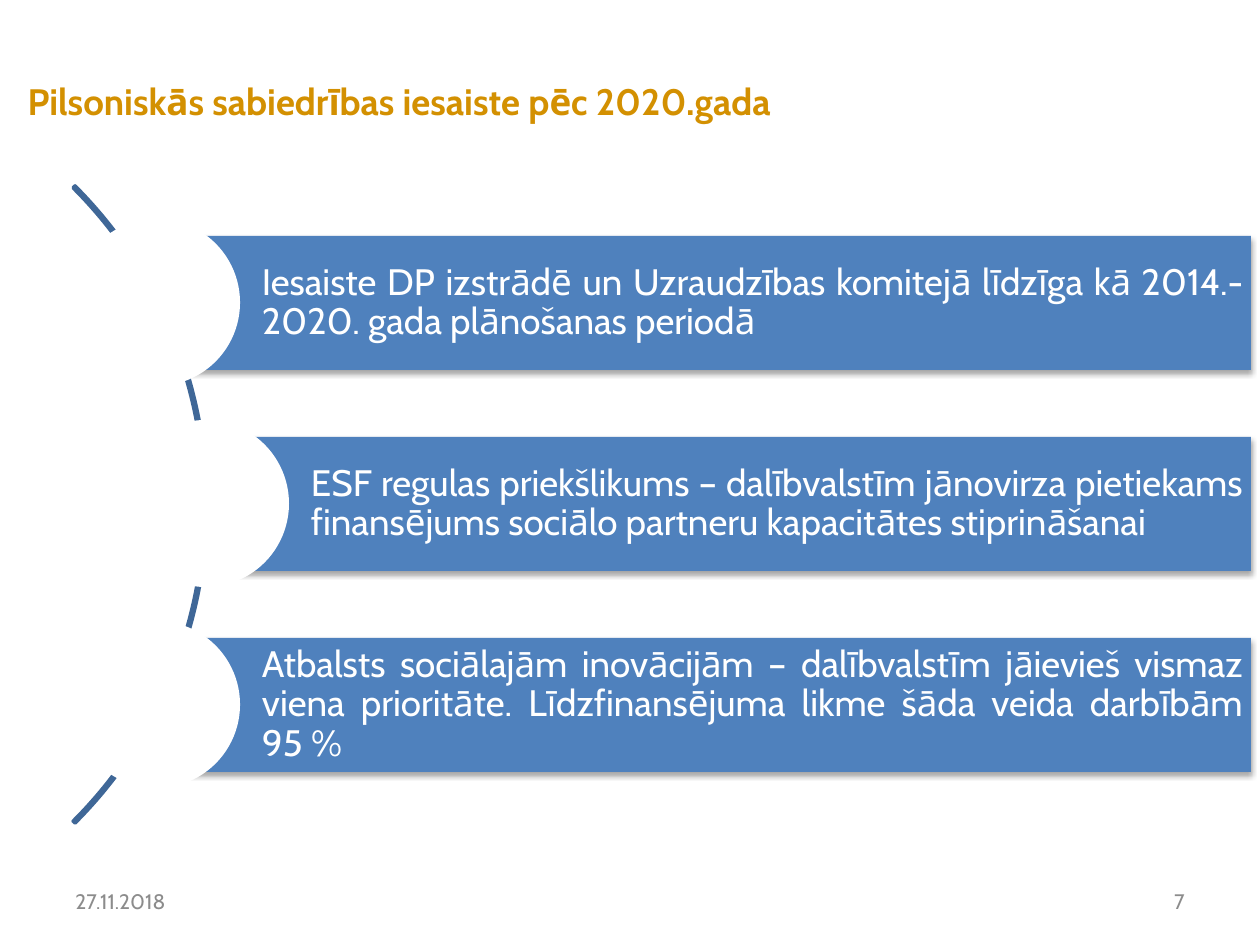
from dataclasses import dataclass

from lxml import etree
from pptx import Presentation
from pptx import util as u
from pptx.dml.color import RGBColor
from pptx.enum import shapes, text
from pptx.oxml import ns

PX_PER_INCH = 126
FONT = "Cabin"
BLUE = RGBColor(0x4F, 0x81, 0xBD)
DARK_BLUE = RGBColor(0x3F, 0x67, 0x97)
GOLD = RGBColor(0xD3, 0x90, 0x01)
GREY = RGBColor(0x8C, 0x8C, 0x8C)
WHITE = RGBColor(0xFF, 0xFF, 0xFF)

BAND_TOP = 236
BAND_STEP = 201
BAND_HEIGHT = 134
BAND_RIGHT = 1251
CIRCLE_SIZE = 167
ARC_CENTRE_X = -244
ARC_SIZE = 901


@dataclass(frozen=True)
class Band:
    left: int
    wording: str


@dataclass(frozen=True)
class Footer:
    left: int
    wording: str
    align: text.PP_ALIGN


BANDS = [
    Band(156, "Iesaiste DP izstrādē un Uzraudzības komitejā līdzīga kā "
              "2014.-2020. gada plānošanas periodā"),
    Band(205, "ESF regulas priekšlikums – dalībvalstīm jānovirza pietiekams "
              "finansējums sociālo partneru kapacitātes stiprināšanai"),
    Band(156, "Atbalsts sociālajām inovācijām – dalībvalstīm jāievieš vismaz "
              "viena prioritāte. Līdzfinansējuma likme šāda veida darbībām 95 %"),
]
FOOTERS = [
    Footer(63, "27.11.2018", text.PP_ALIGN.LEFT),
    Footer(903, "7", text.PP_ALIGN.RIGHT),
]


def px(length: int) -> u.Emu:
    return u.Emu(round(length * u.Inches(1) / PX_PER_INCH))


def write(shape, wording: str, size: int, colour: RGBColor,
          align: text.PP_ALIGN, bold: bool = False):
    frame = shape.text_frame
    frame.word_wrap = True
    frame.auto_size = text.MSO_AUTO_SIZE.NONE
    frame.vertical_anchor = text.MSO_ANCHOR.MIDDLE
    para = frame.paragraphs[0]
    para.alignment = align
    span = para.add_run()
    span.text = wording
    span.font.name = FONT
    span.font.size = u.Pt(size)
    span.font.bold = bold
    span.font.color.rgb = colour
    return para


def add_plain(page, kind: shapes.MSO_SHAPE, left: int, top: int,
              width: int, height: int, fill: RGBColor | None):
    shape = page.shapes.add_shape(kind, px(left), px(top), px(width), px(height))
    shape.shadow.inherit = False
    shape.line.fill.background()
    if fill is None:
        shape.fill.background()
    else:
        shape.fill.solid()
        shape.fill.fore_color.rgb = fill
    return shape


def cast_shadow(shape) -> None:
    effects = shape._element.spPr.find(ns.qn("a:effectLst"))
    shadow = etree.SubElement(
        effects, ns.qn("a:outerShdw"), blurRad=str(u.Pt(3.1)),
        dist=str(u.Pt(1.8)), dir="5400000", rotWithShape="0")
    colour = etree.SubElement(shadow, ns.qn("a:srgbClr"), val="000000")
    etree.SubElement(colour, ns.qn("a:alpha"), val="35000")


def add_arc(page) -> None:
    middle = BAND_TOP + BAND_STEP + BAND_HEIGHT // 2
    arc = add_plain(page, shapes.MSO_SHAPE.BLOCK_ARC,
                    ARC_CENTRE_X - ARC_SIZE // 2, middle - ARC_SIZE // 2,
                    ARC_SIZE, ARC_SIZE, None)
    for index, value in enumerate((189, 27, 0.003)):
        arc.adjustments[index] = value
    arc.line.color.rgb = DARK_BLUE
    arc.line.width = u.Pt(2)


def add_band(page, band: Band, top: int) -> None:
    box = add_plain(page, shapes.MSO_SHAPE.RECTANGLE, band.left, top,
                    BAND_RIGHT - band.left, BAND_HEIGHT, BLUE)
    cast_shadow(box)
    frame = box.text_frame
    frame.margin_left = px(106)
    frame.margin_right = frame.margin_top = frame.margin_bottom = px(8)
    para = write(box, band.wording, 21, WHITE, text.PP_ALIGN.JUSTIFY)
    para.line_spacing = 0.9
    add_plain(page, shapes.MSO_SHAPE.OVAL, band.left - CIRCLE_SIZE // 2,
              top + (BAND_HEIGHT - CIRCLE_SIZE) // 2,
              CIRCLE_SIZE, CIRCLE_SIZE, WHITE)


def add_footer(page, footer: Footer) -> None:
    box = page.shapes.add_textbox(px(footer.left), px(876), px(294), px(50))
    write(box, footer.wording, 12, GREY, footer.align)


def main() -> None:
    deck = Presentation()
    deck.slide_width, deck.slide_height = px(1260), px(945)
    page = deck.slides.add_slide(deck.slide_layouts[5])

    title = page.shapes.title
    title.left, title.top, title.width, title.height = map(px, (15, 71, 873, 59))
    write(title, "Pilsoniskās sabiedrības iesaiste pēc 2020.gada", 21, GOLD,
          text.PP_ALIGN.LEFT, bold=True)

    add_arc(page)
    for index, band in enumerate(BANDS):
        add_band(page, band, BAND_TOP + index * BAND_STEP)
    for footer in FOOTERS:
        add_footer(page, footer)

    deck.save("out.pptx")


if __name__ == "__main__":
    main()
